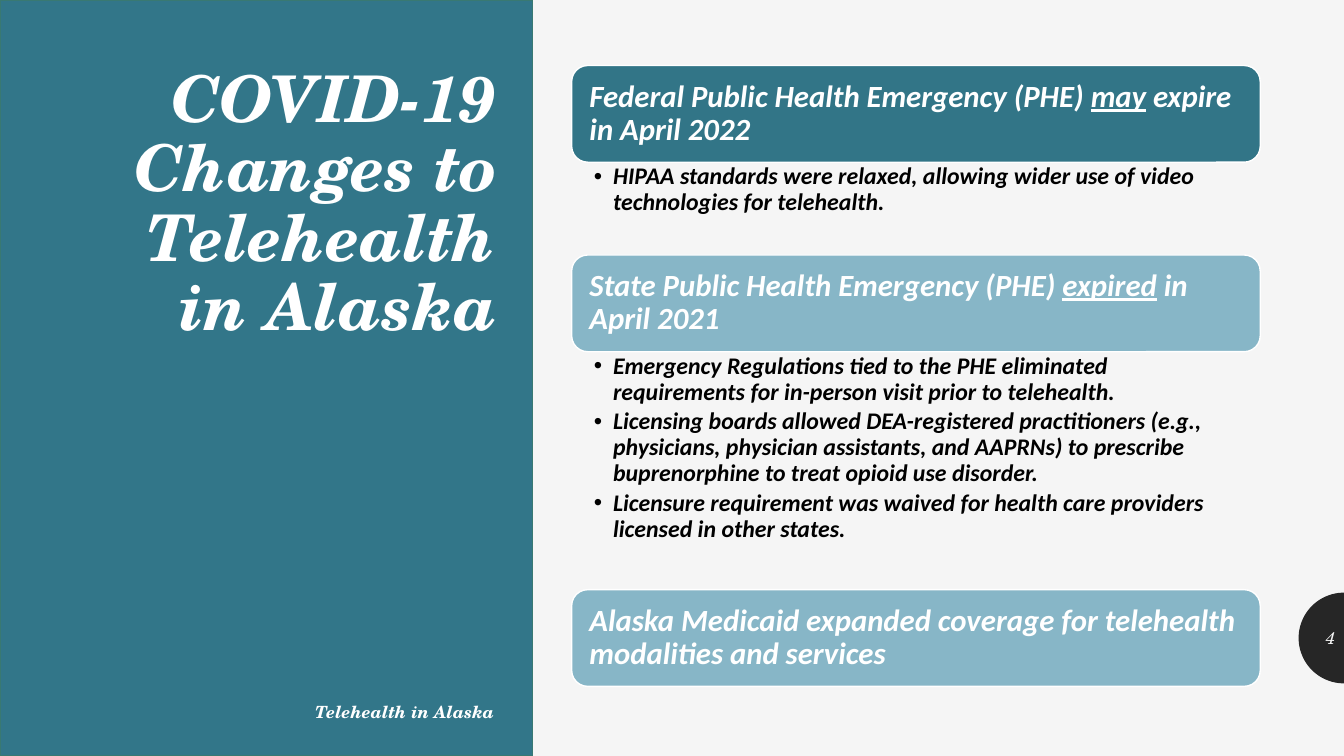
from math import cos, pi, sin

from lxml import etree
from pptx import Presentation
from pptx.dml.color import RGBColor
from pptx.enum.shapes import MSO_SHAPE
from pptx.enum.text import MSO_ANCHOR, MSO_AUTO_SIZE, PP_ALIGN
from pptx.oxml.ns import qn
from pptx.util import Inches, Pt

RECT, ROUND = MSO_SHAPE.RECTANGLE, MSO_SHAPE.ROUNDED_RECTANGLE
TOP, MIDDLE = MSO_ANCHOR.TOP, MSO_ANCHOR.MIDDLE
LEFT, RIGHT = PP_ALIGN.LEFT, PP_ALIGN.RIGHT
NO_FIT = MSO_AUTO_SIZE.NONE

WHITE, BLACK, DARK, PALE = "FFFFFF", "000000", "262626", "F5F5F5"
TEAL, DEEP, LIGHT, EDGE = "327689", "327587", "87B6C7", "397972"
SERIF, SANS = "TeX Gyre Schola", "Calibri"


def color(code):
    return RGBColor.from_string(code)


class Page:
    pad = (0.1, 0.05, 0.1, 0.05)

    def __init__(self, deck):
        self.slide = deck.slides.add_slide(deck.slide_layouts[3])
        self.shapes = self.slide.shapes
        back = self.slide.background.fill
        back.solid()
        back.fore_color.rgb = color(PALE)

    def paint(self, shape, fill, line=None):
        shape.shadow.inherit = False
        shape.fill.solid()
        shape.fill.fore_color.rgb = color(fill)
        if line:
            shape.line.color.rgb = color(line)
            shape.line.width = Pt(1)
        else:
            shape.line.fill.background()

    def box(self, kind, area, fill, line):
        shape = self.shapes.add_shape(kind, *map(Inches, area))
        self.paint(shape, fill, line)
        return shape

    def put_text(self, shape, paras, font, size, tint, bold=True,
                 align=LEFT, anchor=TOP, pad=pad, lead=0.9, after=0):
        """Each paragraph is a list of parts; every second part is underlined."""
        frame = shape.text_frame
        left, top, right, bottom = map(Inches, pad)
        look = {"word_wrap": True, "auto_size": NO_FIT, "vertical_anchor": anchor,
                "margin_left": left, "margin_top": top,
                "margin_right": right, "margin_bottom": bottom}
        for name, value in look.items():
            setattr(frame, name, value)
        style = {"name": font, "size": Pt(size), "bold": bold, "italic": True}
        flow = {"alignment": align, "line_spacing": lead,
                "space_before": Pt(0), "space_after": Pt(after)}
        for i, parts in enumerate(paras):
            para = frame.add_paragraph() if i else frame.paragraphs[0]
            for name, value in flow.items():
                setattr(para, name, value)
            for j, part in enumerate(parts):
                run = para.add_run()
                run.text = part
                for name, value in style.items():
                    setattr(run.font, name, value)
                run.font.color.rgb = color(tint)
                if j % 2:
                    run.font.underline = True

    def holder(self, index, area):
        """Place a template placeholder in front of what is drawn so far."""
        shape = self.slide.placeholders[index]
        names = ("left", "top", "width", "height")
        for name, value in zip(names, area):
            setattr(shape, name, Inches(value))
        self.shapes._spTree.append(shape._element)
        return shape

    def title(self, text, area):
        self.put_text(self.holder(0, area), [[text]], SERIF, 46, WHITE, align=RIGHT)

    def label(self, text, area, **look):
        shape = self.shapes.add_textbox(*map(Inches, area))
        self.put_text(shape, [[text]], SERIF, 12, align=RIGHT, lead=1.0, **look)

    def head(self, parts, top, fill):
        shape = self.box(ROUND, (5.67, top, 6.83, 0.96), fill, WHITE)
        self.put_text(shape, [parts], SANS, 22, WHITE, anchor=MIDDLE,
                      pad=(0.13, 0.09, 0.13, 0.09))

    def bullets(self, index, items, top, height):
        shape = self.holder(index, (5.67, top, 6.83, height))
        self.put_text(shape, [[item] for item in items], SANS, 17, BLACK,
                      pad=(0.22, 0.03, 0.17, 0.03), after=3)
        for para in shape.text_frame.paragraphs:
            props = para._p.get_or_add_pPr()
            props.set("marL", str(Inches(0.19)))
            props.set("indent", str(Inches(-0.19)))
            etree.SubElement(props, qn("a:buChar")).set("char", "•")

    def dome(self, x, y, radius, fill):
        """Half disc whose flat side stands at x."""
        turns = [pi / 2 + pi * i / 48 for i in range(49)]
        dots = [(Inches(x + radius * cos(t)), Inches(y - radius * sin(t)))
                for t in turns]
        curve = self.shapes.build_freeform(*dots[0])
        curve.add_line_segments(dots[1:], close=True)
        self.paint(curve.convert_to_shape(), fill)


def main():
    deck = Presentation()
    deck.slide_width, deck.slide_height = Inches(13.33), Inches(7.5)
    page = Page(deck)

    # Title panel
    page.box(RECT, (0, 0, 5.28, 7.5), TEAL, EDGE)
    page.title("COVID-19 Changes to Telehealth in Alaska", (0.83, 0.61, 4.19, 5.42))

    # Federal emergency
    page.head(["Federal Public Health Emergency (PHE) ", "may",
               " expire in April 2022"], 0.65, DEEP)
    page.bullets(1, [
        "HIPAA standards were relaxed, allowing wider use of video "
        "technologies for telehealth.",
    ], 1.6, 0.92)

    # State emergency
    page.head(["State Public Health Emergency (PHE) ", "expired",
               " in April 2021"], 2.53, LIGHT)
    page.bullets(2, [
        "Emergency Regulations tied to the PHE eliminated requirements for "
        "in-person visit prior to telehealth.",
        "Licensing boards allowed DEA-registered practitioners (e.g., physicians, "
        "physician assistants, and AAPRNs) to prescribe buprenorphine to treat "
        "opioid use disorder.",
        "Licensure requirement was waived for health care providers licensed in "
        "other states.",
    ], 3.48, 2.34)

    # Medicaid
    page.head(["Alaska Medicaid expanded coverage for telehealth modalities "
               "and services"], 5.85, LIGHT)

    # Footer and page number
    page.label("Telehealth in Alaska", (0.83, 6.91, 4.17, 0.4), tint=WHITE)
    page.dome(13.33, 6.33, 0.45, DARK)
    page.label("4", (12.89, 6.13, 0.45, 0.4), tint=PALE, bold=False, anchor=MIDDLE)

    deck.save("out.pptx")


if __name__ == "__main__":
    main()
